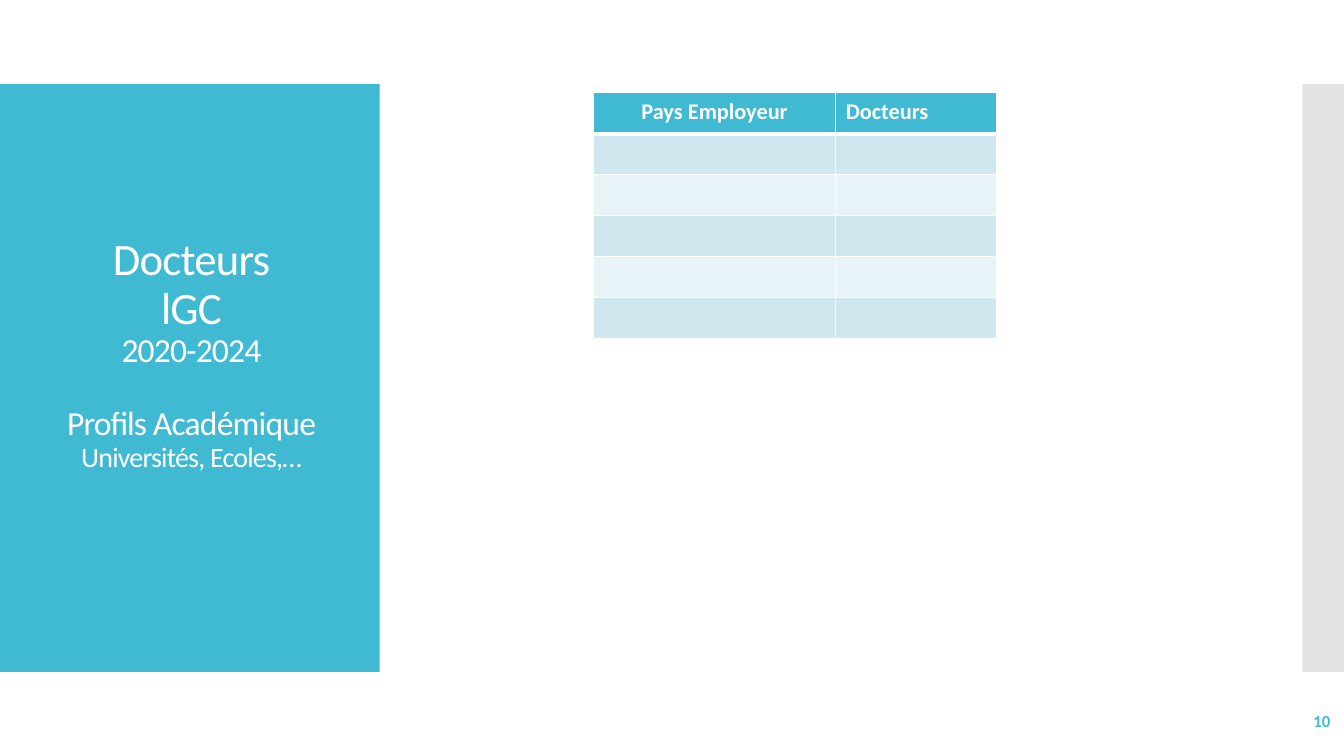
from lxml import etree
from pptx import Presentation
from pptx.dml.color import RGBColor
from pptx.enum.shapes import MSO_SHAPE
from pptx.enum.text import MSO_ANCHOR, MSO_AUTO_SIZE, PP_ALIGN
from pptx.oxml.ns import qn
from pptx.util import Cm, Pt

RECTANGLE = MSO_SHAPE.RECTANGLE
MIDDLE = MSO_ANCHOR.MIDDLE
NO_AUTOFIT = MSO_AUTO_SIZE.NONE
LEFT, CENTER, RIGHT = PP_ALIGN.LEFT, PP_ALIGN.CENTER, PP_ALIGN.RIGHT

FONT = "Calibri"
TITLE_ONLY = 5
ACCENT, WHITE, GREY = "40BAD2", "FFFFFF", "C8C8C8"
BANDS = ["CFE7EE", "E8F3F7"]
PANEL_TOP, PANEL_HEIGHT = 2.12, 14.81

TITLE_LINES = [
    ("Docteurs", 32, 0),
    ("lGC", 32, 0),
    ("2020-2024", 24, 0),
    ("Profils Académique", 24, 26),
    ("Universités, Ecoles,…", 20, 0),
]
HEADERS = [("Pays Employeur", CENTER, 6.1), ("Docteurs", LEFT, 4.06)]
BODY_ROWS = 5
ROW_HEIGHT = 1.03


def color(value):
    return RGBColor.from_string(value)


def write(paragraph, text, size, ink=WHITE, bold=False, align=LEFT, spacing=None):
    """Add a formatted run; spacing is the letter spacing in points."""
    paragraph.alignment = align
    run = paragraph.add_run()
    run.text = text
    run.font.name = FONT
    run.font.size = Pt(size)
    run.font.bold = bold
    run.font.color.rgb = color(ink)
    if spacing is not None:
        run.font._element.set("spc", str(round(spacing * 100)))


def add_panel(slide, left, width, fill, opacity=100):
    """Add a rectangle behind the title."""
    panel = slide.shapes.add_shape(
        RECTANGLE, Cm(left), Cm(PANEL_TOP), Cm(width), Cm(PANEL_HEIGHT))
    panel.shadow.inherit = False
    panel.line.fill.background()
    panel.fill.solid()
    panel.fill.fore_color.rgb = color(fill)
    if opacity < 100:
        solid_color = panel.element.spPr.find(qn("a:solidFill"))[0]
        etree.SubElement(solid_color, qn("a:alpha"), val=str(opacity * 1000))
    slide.shapes.title.element.addprevious(panel.element)


def fill_title(title):
    title.left, title.top = Cm(0.23), Cm(3.12)
    title.width, title.height = Cm(9.19), Cm(12.78)
    frame = title.text_frame
    frame.word_wrap = True
    frame.auto_size = NO_AUTOFIT
    frame.vertical_anchor = MIDDLE
    frame.margin_bottom = Cm(1.25)
    for index, (text, size, gap) in enumerate(TITLE_LINES):
        paragraph = frame.add_paragraph() if index else frame.paragraphs[0]
        paragraph.line_spacing = 0.9
        paragraph.space_before = Pt(gap)
        write(paragraph, text, size, align=CENTER, spacing=-0.6)


def set_borders(cell, **widths):
    """Draw white borders, given in points by side: L, R, T, B."""
    properties = cell._tc.get_or_add_tcPr()
    for side, width in widths.items():
        line = etree.SubElement(properties, qn(f"a:ln{side}"), w=str(Pt(width)))
        solid = etree.SubElement(line, qn("a:solidFill"))
        etree.SubElement(solid, qn("a:srgbClr"), val=WHITE)


def add_employer_table(slide):
    rows = BODY_ROWS + 1
    width = sum(column_width for _, _, column_width in HEADERS)
    table = slide.shapes.add_table(
        rows, len(HEADERS), Cm(14.96), Cm(2.34), Cm(width), Cm(rows * ROW_HEIGHT)).table
    for row in table.rows:
        row.height = Cm(ROW_HEIGHT)
    for column, (header, align, column_width) in enumerate(HEADERS):
        table.columns[column].width = Cm(column_width)
        write(table.cell(0, column).text_frame.paragraphs[0], header, 16,
              bold=True, align=align)
        for row in range(rows):
            cell = table.cell(row, column)
            set_borders(cell, L=1, R=1, T=3 if row == 1 else 1, B=1 if row else 3)
            cell.fill.solid()
            cell.fill.fore_color.rgb = color(BANDS[(row - 1) % 2] if row else ACCENT)


def add_page_number(slide, number):
    box = slide.shapes.add_textbox(Cm(29.54), Cm(17.65), Cm(4.24), Cm(1.02))
    frame = box.text_frame
    frame.word_wrap = True
    frame.vertical_anchor = MIDDLE
    write(frame.paragraphs[0], number, 12, ink=ACCENT, bold=True, align=RIGHT)


def main():
    presentation = Presentation()
    presentation.slide_width, presentation.slide_height = Cm(33.87), Cm(19.05)
    slide = presentation.slides.add_slide(presentation.slide_layouts[TITLE_ONLY])
    add_panel(slide, 0, 9.57, ACCENT)
    add_panel(slide, 32.82, 1.05, GREY, opacity=50)
    fill_title(slide.shapes.title)
    add_employer_table(slide)
    add_page_number(slide, "10")
    presentation.save("out.pptx")


if __name__ == "__main__":
    main()
